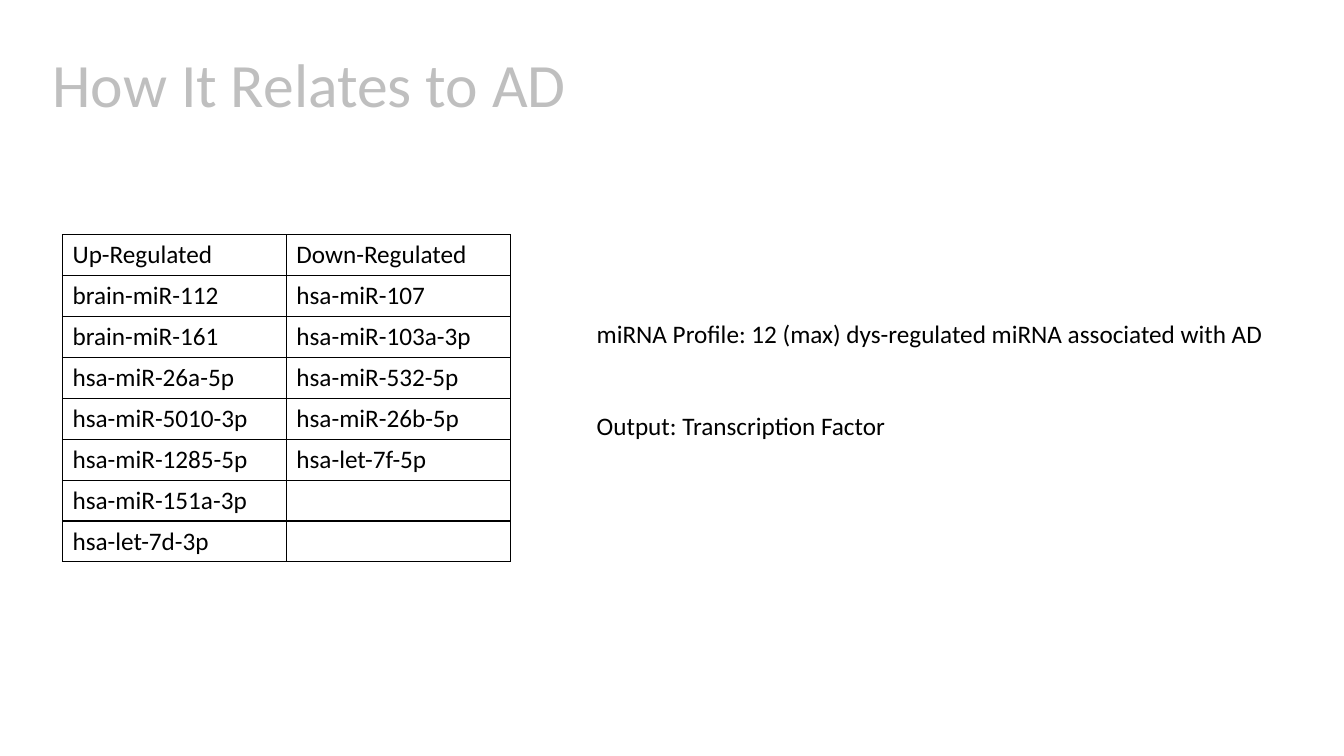
from pptx import Presentation
from pptx.dml.color import RGBColor
from pptx.enum.text import MSO_ANCHOR, PP_ALIGN
from pptx.oxml import parse_xml
from pptx.oxml.ns import nsdecls
from pptx.util import Pt

EMU_PER_PX = 9144  # 100 px to the inch
FONT = "Calibri"
BLACK = RGBColor(0x00, 0x00, 0x00)
GREY = RGBColor(0xBF, 0xBF, 0xBF)
TOP = MSO_ANCHOR.TOP
LEFT = PP_ALIGN.LEFT
BORDER_SIDES = ("lnL", "lnR", "lnT", "lnB")
TITLE_ONLY = 5

UP_REGULATED = [
    "brain-miR-112", "brain-miR-161", "hsa-miR-26a-5p", "hsa-miR-5010-3p",
    "hsa-miR-1285-5p", "hsa-miR-151a-3p", "hsa-let-7d-3p",
]
DOWN_REGULATED = [
    "hsa-miR-107", "hsa-miR-103a-3p", "hsa-miR-532-5p", "hsa-miR-26b-5p",
    "hsa-let-7f-5p",
]
NOTES = [
    "miRNA Profile: 12 (max) dys-regulated miRNA associated with AD",
    "Output: Transcription Factor",
]


def px(length):
    return length * EMU_PER_PX


class SlideBuilder:
    """Holds the text style and the slide being filled."""

    def __init__(self, slide, font=FONT, body_size=18):
        self.slide = slide
        self.font = font
        self.body_size = body_size

    def add_run(self, para, text, size=None, color=BLACK):
        span = para.add_run()
        span.text = text
        span.font.name = self.font
        span.font.size = Pt(size or self.body_size)
        span.font.color.rgb = color

    def title(self, text, left, top, width, height):
        box = self.slide.shapes.title
        box.left, box.top = px(left), px(top)
        box.width, box.height = px(width), px(height)
        box.text_frame.vertical_anchor = TOP
        box.text_frame.word_wrap = True
        para = box.text_frame.paragraphs[0]
        para.alignment = LEFT
        para.line_spacing = 0.9
        self.add_run(para, text, 44, GREY)

    def text(self, lines, left, top, width, height, gap):
        """Adds one paragraph per line, with gap points between them."""
        box = self.slide.shapes.add_textbox(px(left), px(top), px(width), px(height))
        frame = box.text_frame
        frame.word_wrap = True
        for index, line in enumerate(lines):
            para = frame.add_paragraph() if index else frame.paragraphs[0]
            if index:
                para.space_before = Pt(gap)
            self.add_run(para, line)

    def table(self, columns, left, top, width, height):
        """Adds a bordered table from (heading, entries) columns."""
        row_count = 1 + max(len(entries) for _, entries in columns)
        table = self.slide.shapes.add_table(
            row_count, len(columns), px(left), px(top), px(width), px(height)
        ).table
        table.first_row = False
        table.horz_banding = False
        for cell in table.iter_cells():
            self.add_borders(cell)
            cell.fill.background()
        for column, (heading, entries) in enumerate(columns):
            for row, text in enumerate([heading, *entries]):
                para = table.cell(row, column).text_frame.paragraphs[0]
                self.add_run(para, text)

    def add_borders(self, cell):
        properties = cell._tc.get_or_add_tcPr()
        for side in BORDER_SIDES:
            properties.append(parse_xml(
                f'<a:{side} {nsdecls("a")} w="{Pt(1)}"><a:solidFill>'
                f'<a:srgbClr val="{BLACK}"/></a:solidFill></a:{side}>'
            ))


def main():
    deck = Presentation()
    deck.slide_width, deck.slide_height = px(1333), px(750)
    page = SlideBuilder(deck.slides.add_slide(deck.slide_layouts[TITLE_ONLY]))
    page.title("How It Relates to AD", 42, 49, 568, 106)
    page.table(
        [("Up-Regulated", UP_REGULATED), ("Down-Regulated", DOWN_REGULATED)],
        62, 233, 444, 324,
    )
    page.text(NOTES, 582, 311, 687, 131, gap=44)
    deck.save("out.pptx")


if __name__ == "__main__":
    main()
